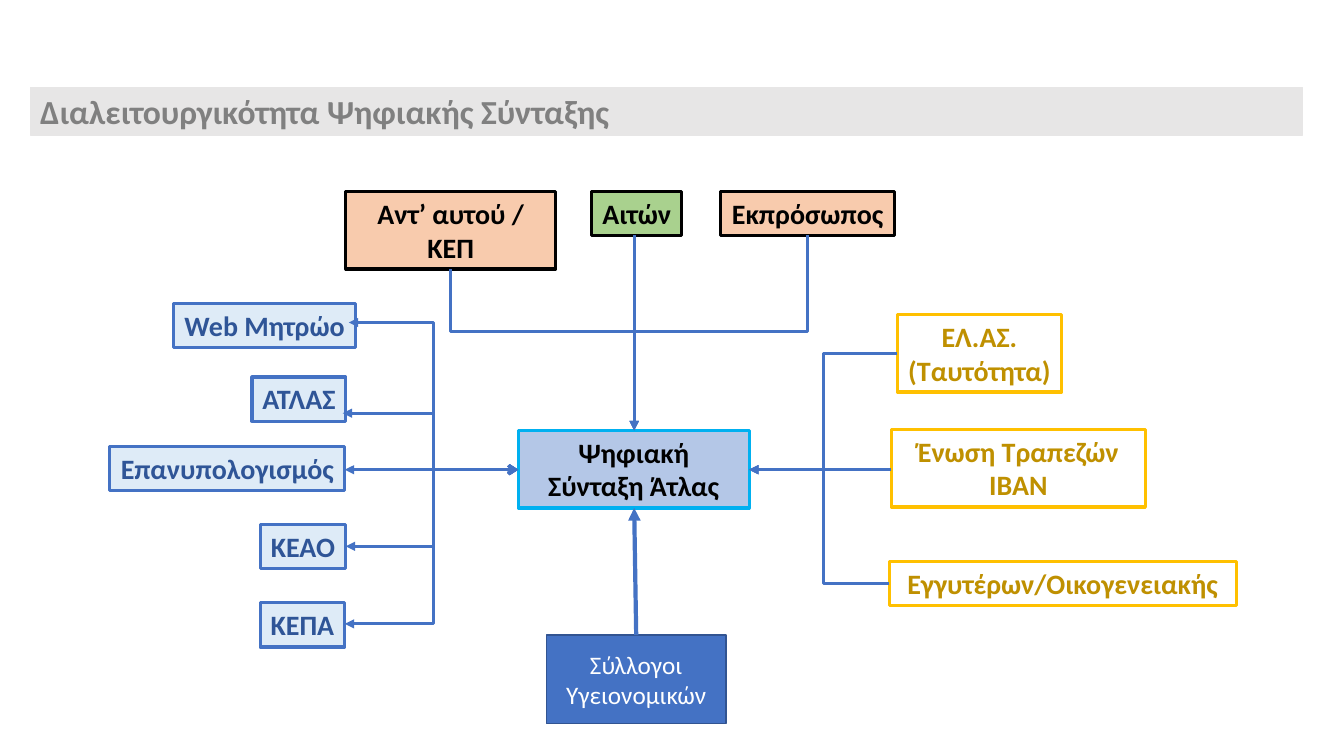
from pptx import Presentation
from pptx.dml.color import RGBColor as RGB
from pptx.enum.shapes import MSO_CONNECTOR as Link, MSO_SHAPE as Shape
from pptx.enum.text import MSO_ANCHOR as Anchor, MSO_AUTO_SIZE as AutoSize, PP_ALIGN as Align
from pptx.oxml.ns import qn
from pptx.util import Inches, Pt
from lxml import etree

COLORS = {
    "black": "000000", "white": "FFFFFF", "band": "E7E6E6", "heading": "808080",
    "peach": "F8CBAD", "green": "A9D18E", "gold": "FFC000", "dark_gold": "BF9000",
    "hub": "B4C7E7", "cyan": "00B0F0", "pale_blue": "DEEBF7", "blue": "4472C4",
    "navy": "2F5597", "edge": "325491",
}


def color(name):
    """Return the named colour."""
    return RGB.from_string(COLORS[name])


def write(frame, text, size=20, ink="black", bold=True, align=Align.CENTER,
          anchor=Anchor.TOP, wrap=True, grow=True):
    """Fill a text frame with one paragraph per line of text."""
    frame.text = text
    frame.word_wrap = wrap
    frame.vertical_anchor = anchor
    frame.auto_size = AutoSize.SHAPE_TO_FIT_TEXT if grow else AutoSize.NONE
    for paragraph in frame.paragraphs:
        paragraph.alignment = align
        font = paragraph.runs[0].font
        font.name, font.size, font.bold = "Calibri", Pt(size), bold
        font.color.rgb = color(ink)


class Diagram:
    """Draws styled boxes and arrows on one slide."""

    def __init__(self, slide):
        """Keep the slide to draw on."""
        self.shapes = slide.shapes
        self.arrow_color = "blue"

    def box(self, text, place, fill=None, border="black", weight=2.25, **text_format):
        """Add a bordered rectangle with text."""
        box = self.shapes.add_shape(Shape.RECTANGLE, *map(Inches, place))
        box.shadow.inherit = False
        if fill:
            box.fill.solid()
            box.fill.fore_color.rgb = color(fill)
        else:
            box.fill.background()
        box.line.color.rgb = color(border)
        box.line.width = Pt(weight)
        write(box.text_frame, text, **text_format)

    def arrow(self, start, end, kind=Link.STRAIGHT, weight=2.25, both=False):
        """Add a connector with an arrowhead at its end, or at both ends."""
        arrow = self.shapes.add_connector(kind, *map(Inches, (*start, *end)))
        arrow.line.color.rgb = color(self.arrow_color)
        arrow.line.width = Pt(weight)
        properties = arrow._element.spPr
        outline = properties.find(qn("a:ln"))
        if both:
            etree.SubElement(outline, qn("a:headEnd"), type="arrow")
        etree.SubElement(outline, qn("a:tailEnd"), type="triangle")
        etree.SubElement(properties, qn("a:effectLst"))
        return properties

    def bend(self, start, end, turn, both=False):
        """Add an elbow that runs sideways and turns at a given x."""
        properties = self.arrow(start, end, Link.ELBOW, both=both)
        self.set_turn(properties, (turn - start[0]) / (end[0] - start[0]))

    def drop(self, start, end, turn):
        """Add an elbow that runs downwards and turns at a given y."""
        across, down = end[0] - start[0], end[1] - start[1]
        middle_x, middle_y = start[0] + across / 2, start[1] + down / 2
        side = 1 if across < 0 else -1
        half_x, half_y = side * down / 2, side * across / 2
        properties = self.arrow((middle_x - half_x, middle_y + half_y),
                                (middle_x + half_x, middle_y - half_y), Link.ELBOW)
        quarter_turns = 1 if side > 0 else 3
        properties.find(qn("a:xfrm")).set("rot", str(quarter_turns * 5400000))
        self.set_turn(properties, (turn - start[1]) / down)

    def set_turn(self, properties, share):
        """Place the turn of an elbow at a share of its length."""
        geometry = properties.find(qn("a:prstGeom"))
        guides = geometry.find(qn("a:avLst"))
        if guides is None:
            guides = etree.SubElement(geometry, qn("a:avLst"))
        etree.SubElement(guides, qn("a:gd"), name="adj1", fmla=f"val {round(share * 100000)}")


def main():
    """Build the interoperability slide."""
    deck = Presentation()
    deck.slide_width, deck.slide_height = Inches(13.33), Inches(7.5)
    diagram = Diagram(deck.slides.add_slide(deck.slide_layouts[6]))

    diagram.box("Διαλειτουργικότητα Ψηφιακής Σύνταξης", (0.3, 0.87, 12.62, 0.47),
                "band", "band", 0.75, size=24, ink="heading", align=Align.LEFT,
                anchor=Anchor.MIDDLE, grow=False)

    applicants = [
        ("Αντ’ αυτού / ΚΕΠ", (3.43, 1.9, 2.08, 0.77), "peach", True),
        ("Αιτών", (5.87, 1.9, 0.89, 0.44), "green", False),
        ("Εκπρόσωπος", (7.15, 1.9, 1.72, 0.44), "peach", False),
    ]
    for name, place, fill, wrap in applicants:
        diagram.box(name, place, fill, wrap=wrap)

    outside_sources = [
        ("ΕΛ.ΑΣ.\n(Ταυτότητα)", (8.9, 3.12, 1.63, 0.77), False),
        ("Ένωση Τραπεζών IBAN", (8.84, 4.26, 2.52, 0.77), True),
        ("Εγγυτέρων/Οικογενειακής", (8.82, 5.57, 3.44, 0.44), False),
    ]
    for name, place, wrap in outside_sources:
        diagram.box(name, place, border="gold", ink="dark_gold", wrap=wrap)

    diagram.box("Ψηφιακή Σύνταξη Άτλας", (5.14, 4.27, 2.29, 0.77), "hub", "cyan")

    registries = [
        ("Web Μητρώο", 1.72, 3.01, 1.81),
        ("ΑΤΛΑΣ", 2.5, 3.74, 0.93),
        ("Επανυπολογισμός", 1.09, 4.43, 2.33),
        ("KEAO", 2.58, 5.2, 0.85),
        ("ΚΕΠΑ", 2.58, 5.98, 0.84),
    ]
    for name, left, top, width in registries:
        diagram.box(name, (left, top, width, 0.44), "pale_blue", "blue",
                    ink="navy", wrap=False)

    hub_left, hub_right, hub_top = (5.14, 4.66), (7.43, 4.66), (6.29, 4.27)
    for registry in [(3.46, 3.2), (3.4, 4.1), (3.43, 5.42), (3.42, 6.19)]:
        diagram.bend(hub_left, registry, turn=4.3, both=True)
    diagram.arrow(hub_left, (3.42, 4.66), both=True)

    for source in [(8.9, 3.51), (8.82, 5.79)]:
        diagram.bend(source, hub_right, turn=8.17)
    diagram.arrow((8.84, 4.66), hub_right)

    for applicant in [(4.47, 2.67), (8.01, 2.33)]:
        diagram.drop(applicant, hub_top, turn=3.29)
    diagram.arrow((6.29, 2.33), hub_top)

    diagram.box("Σύλλογοι Υγειονομικών", (5.42, 6.3, 1.78, 0.88), "blue", "edge", 1,
                size=18, ink="white", bold=False, anchor=Anchor.MIDDLE, grow=False)
    diagram.arrow((6.31, 6.3), (6.29, 5.04), weight=3)

    deck.save("out.pptx")


if __name__ == "__main__":
    main()
